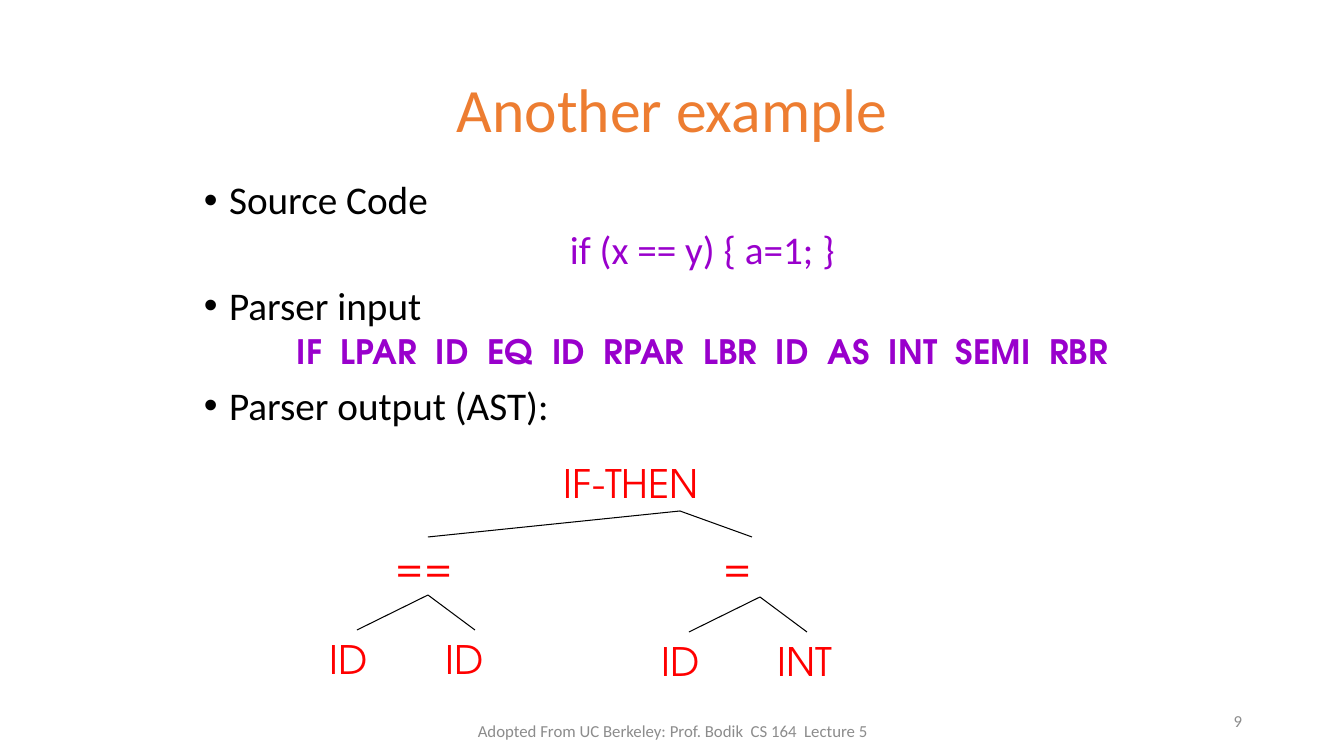
from lxml import etree
from pptx import Presentation
from pptx.dml.color import RGBColor
from pptx.enum import shapes, text
from pptx.oxml.ns import qn
from pptx.util import Emu, Pt

# Content: boxes are (left, top, width, height) in px
SLIDE_SIZE = (1344, 756)
BODY_FONT, TREE_FONT = "Calibri", "TeX Gyre Adventor"
BLACK, PURPLE, RED, GREY, ORANGE = "000000", "9900CC", "FF0000", "8C8C8C", "ED7D31"

TITLE = ("Another example", (93, 40, 1159, 146))
FOOTER = ("Adopted From UC Berkeley: Prof. Bodik  CS 164  Lecture 5", (446, 711, 454, 40))
PAGE_NUMBER = ("9", (950, 701, 302, 40))

BODY_BOX = (194, 176, 966, 487)
STEPS = [  # heading, example, (example font, size, bold)
    ("Source Code", "if (x == y) { a=1; }", (BODY_FONT, 28, False)),
    ("Parser input", "IF  LPAR  ID  EQ  ID  RPAR  LBR  ID  AS  INT  SEMI  RBR", (TREE_FONT, 24, True)),
    ("Parser output (AST):", None, None),
]

ROOT = ("IF-THEN", (554, 454, 251, 57))
ROOT_APEX = (680, 511)
BRANCHES = [  # operator, its left edge, branch end x, apex of its leaves, leaves
    ("==", 386, 428, (428, 595), ("ID", "ID")),
    ("=", 714, 752, (760, 597), ("ID", "INT")),
]
OPERATOR_TOP = 537
NODE_SIZE = (84, 57)
LEAF_DROP = 35
LEAF_OFFSETS = [(-71, -108), (47, 8)]  # line end and label left, from the apex

EMU_PER_PX = 914400 / 100.8


def px(length):
    return Emu(round(length * EMU_PER_PX))


def color(hex_string):
    return RGBColor.from_string(hex_string)


def style(paragraph, font, size, hex_string, bold=False):
    for run in paragraph.runs:
        run.font.name, run.font.size, run.font.bold = font, Pt(size), bold
        run.font.color.rgb = color(hex_string)


def add_frame(box, anchor=text.MSO_ANCHOR.TOP, wrap=True):
    frame = slide.shapes.add_textbox(*map(px, box)).text_frame
    frame.word_wrap = wrap
    frame.vertical_anchor = anchor
    return frame


def add_label(words, box, font, size, hex_string, align, anchor=text.MSO_ANCHOR.MIDDLE):
    frame = add_frame(box, anchor)
    frame.text = words
    frame.paragraphs[0].alignment = align
    style(frame.paragraphs[0], font, size, hex_string)
    return frame.paragraphs[0]


def add_node(words, left, top, size=NODE_SIZE):
    add_label(words, (left, top, *size), TREE_FONT, 28, RED,
              text.PP_ALIGN.LEFT, text.MSO_ANCHOR.TOP)


def add_branch(start, end):
    line = slide.shapes.add_connector(shapes.MSO_CONNECTOR.STRAIGHT, *map(px, start + end))
    line.line.color.rgb = color(BLACK)
    line.line.width = Pt(0.75)
    etree.SubElement(line._element.spPr, qn("a:effectLst"))


def add_step_line(frame, words, left_in, space, bullet):
    first = not frame.paragraphs[0].runs
    paragraph = frame.paragraphs[0] if first else frame.add_paragraph()
    paragraph.text = words
    paragraph.line_spacing = 0.9
    paragraph.space_before = Pt(0 if first else space)
    props = paragraph._p.get_or_add_pPr()
    props.set("marL", str(round(left_in * 914400)))
    props.set("indent", str(-228600))
    if bullet:
        etree.SubElement(props, qn("a:buFont"), typeface="Arial")
        etree.SubElement(props, qn("a:buChar"), char="•")
    else:
        etree.SubElement(props, qn("a:buNone"))
    return paragraph


deck = Presentation()
deck.slide_width, deck.slide_height = map(px, SLIDE_SIZE)
slide = deck.slides.add_slide(deck.slide_layouts[6])

# Title, footer and page number
title = add_label(*TITLE, BODY_FONT, 44, ORANGE, text.PP_ALIGN.CENTER)
title.line_spacing = 0.9
add_label(*FOOTER, BODY_FONT, 12, GREY, text.PP_ALIGN.CENTER)
add_label(*PAGE_NUMBER, BODY_FONT, 12, GREY, text.PP_ALIGN.RIGHT)

# Steps with their examples
body = add_frame(BODY_BOX)
for heading, example, example_style in STEPS:
    style(add_step_line(body, heading, 0.25, 10, True), BODY_FONT, 28, BLACK)
    if example:
        font, size, bold = example_style
        example_line = add_step_line(body, example, 0.75, 5, False)
        example_line.alignment = text.PP_ALIGN.CENTER
        style(example_line, font, size, PURPLE, bold)

# Syntax tree
root_words, (root_left, root_top, *root_size) = ROOT
add_node(root_words, root_left, root_top, root_size)
for operator, left, branch_x, apex, leaves in BRANCHES:
    add_branch(ROOT_APEX, (branch_x, OPERATOR_TOP))
    add_node(operator, left, OPERATOR_TOP)
    apex_x, apex_y = apex
    leaf_top = apex_y + LEAF_DROP
    for leaf, (end_dx, label_dx) in zip(leaves, LEAF_OFFSETS):
        add_branch(apex, (apex_x + end_dx, leaf_top))
        add_node(leaf, apex_x + label_dx, leaf_top)

deck.save("out.pptx")
